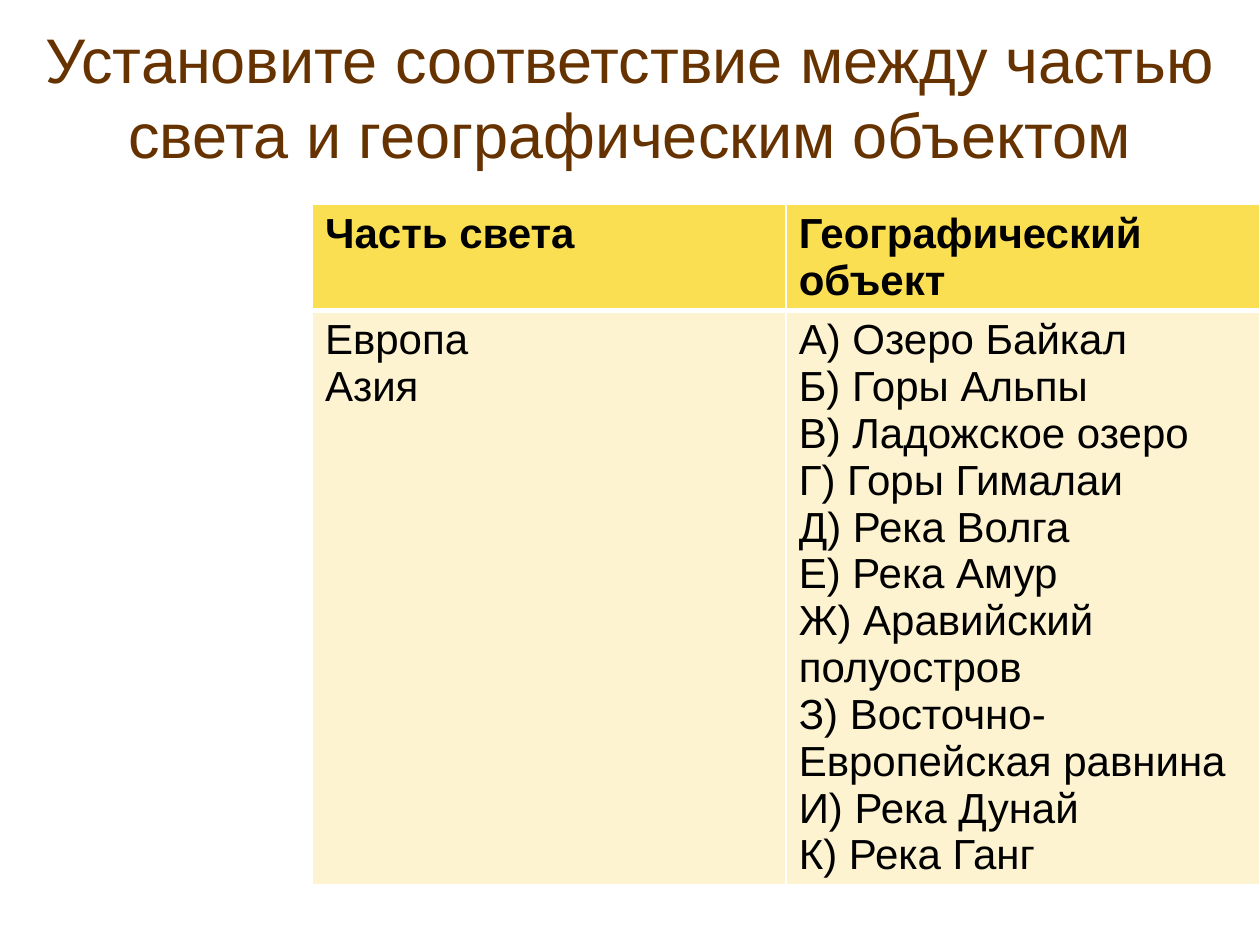
from dataclasses import dataclass

from lxml import etree
from pptx import Presentation
from pptx import util as u
from pptx.dml.color import RGBColor
from pptx.enum import text
from pptx.oxml import ns


@dataclass(frozen=True)
class Theme:
    """Colours, font and type sizes of the deck."""
    font: str = "Arial"
    title_size: int = 36
    table_size: int = 24
    title: str = "663300"
    ink: str = "000000"
    header: str = "FBDF53"
    body: str = "FDF3D1"
    border: str = "FFFFFF"


def write_text(frame, content, *, font, size, color, bold=False, align=None):
    """Write each line of content as one formatted paragraph."""
    for index, line in enumerate(content.split("\n")):
        para = frame.add_paragraph() if index else frame.paragraphs[0]
        para.alignment = align
        span = para.add_run()
        span.text = line
        span.font.name = font
        span.font.size = u.Pt(size)
        span.font.bold = bold
        span.font.color.rgb = RGBColor.from_string(color)


class SlideBuilder:
    """Style and current slide, with a method for each kind of element."""

    def __init__(self, deck, theme):
        """Open a title-only slide."""
        self.theme = theme
        self.page = deck.slides.add_slide(deck.slide_layouts[5])

    def title(self, content, left, top, width, height):
        """Place and fill the title placeholder."""
        box = self.page.shapes.title
        box.left, box.top, box.width, box.height = map(u.Inches, (left, top, width, height))
        frame = box.text_frame
        frame.word_wrap = True
        frame.auto_size = text.MSO_AUTO_SIZE.NONE
        frame.vertical_anchor = text.MSO_ANCHOR.MIDDLE
        write_text(frame, content, font=self.theme.font, size=self.theme.title_size,
                   color=self.theme.title, align=text.PP_ALIGN.CENTER)

    def borders(self, cell, bottom):
        """Draw the four cell edges, the bottom one with its own width."""
        properties = cell._tc.get_or_add_tcPr()
        for side, width in (("L", 1), ("R", 1), ("T", 1), ("B", bottom)):
            line = etree.SubElement(properties, ns.qn(f"a:ln{side}"), w=str(u.Pt(width)))
            fill = etree.SubElement(line, ns.qn("a:solidFill"))
            etree.SubElement(fill, ns.qn("a:srgbClr"), val=self.theme.border)

    def table(self, rows, left, top, width, row_height):
        """Add a table whose first row is the header."""
        table = self.page.shapes.add_table(
            len(rows), len(rows[0]), u.Inches(left), u.Inches(top),
            u.Inches(width), u.Inches(row_height * len(rows))).table
        for row_index, row in enumerate(rows):
            is_header = row_index == 0
            fill = self.theme.header if is_header else self.theme.body
            for column_index, content in enumerate(row):
                cell = table.cell(row_index, column_index)
                self.borders(cell, bottom=3 if is_header else 1)
                cell.fill.solid()
                cell.fill.fore_color.rgb = RGBColor.from_string(fill)
                write_text(cell.text_frame, content, font=self.theme.font,
                           size=self.theme.table_size, color=self.theme.ink, bold=is_header)


def main():
    """Build and save the deck."""
    deck = Presentation()
    deck.slide_width, deck.slide_height = u.Inches(10), u.Inches(7.5)
    builder = SlideBuilder(deck, Theme())
    builder.title("Установите соответствие между частью света и географическим объектом",
                  0, 0.13, 10, 1.26)
    places = "\n".join((
        "А) Озеро Байкал", "Б) Горы Альпы", "В) Ладожское озеро", "Г) Горы Гималаи",
        "Д) Река Волга", "Е) Река Амур", "Ж) Аравийский полуостров",
        "З) Восточно- Европейская равнина", "И) Река Дунай", "К) Река Ганг"))
    builder.table([("Часть света", "Географический объект"), ("Европа\nАзия", places)],
                  2.48, 1.62, 7.52, 0.41)
    deck.save("out.pptx")


if __name__ == "__main__":
    main()
